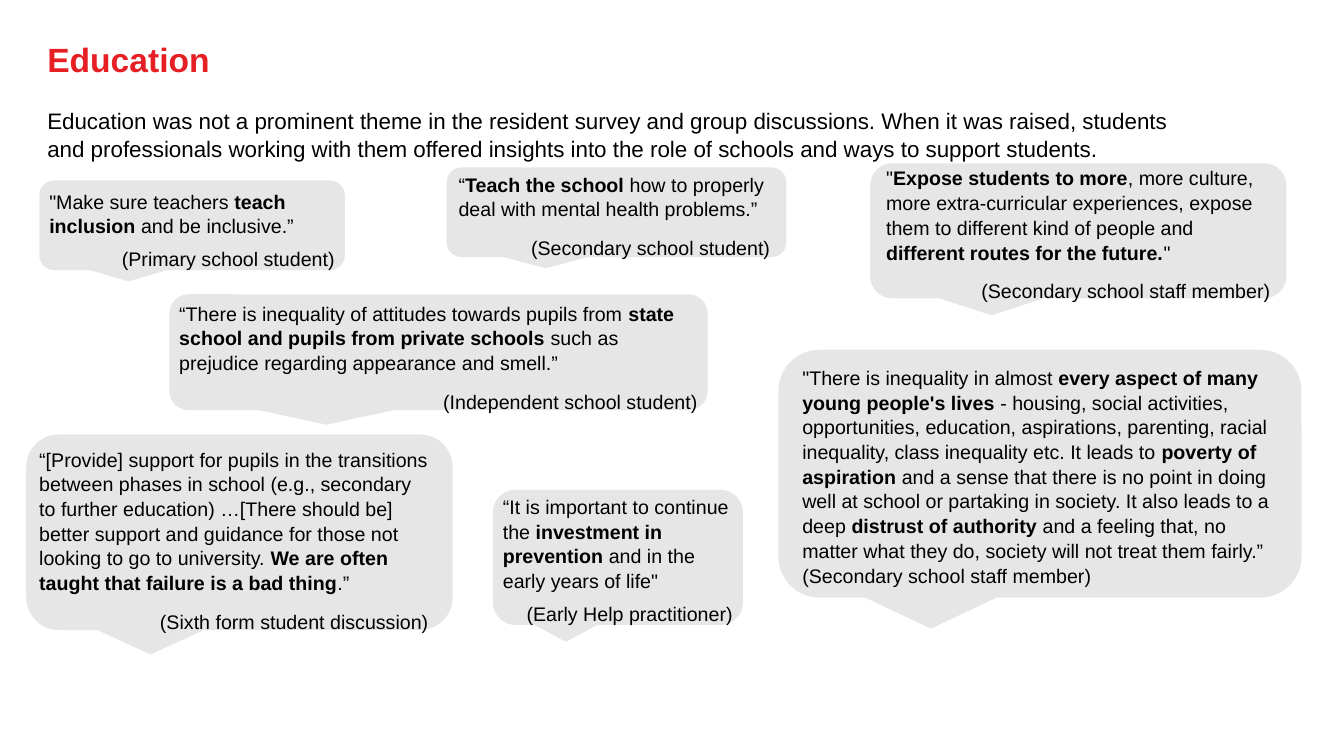
from dataclasses import dataclass

from pptx import Presentation
from pptx.dml.color import RGBColor
from pptx.enum.shapes import MSO_SHAPE
from pptx.enum.text import MSO_ANCHOR, PP_ALIGN
from pptx.slide import Slide
from pptx.text.text import TextFrame, _Paragraph
from pptx.util import Inches, Pt

BUBBLE = MSO_SHAPE.ROUNDED_RECTANGULAR_CALLOUT
MIDDLE = MSO_ANCHOR.MIDDLE
RIGHT = PP_ALIGN.RIGHT

WIDTH, HEIGHT = Inches(13.33), Inches(7.5)
FONT = "Arial"
COLORS = {"title": "E51F23", "text": "000000", "bubble": "E7E6E6"}


@dataclass
class Box:
    """Left, top, width and height in percent of the slide."""
    x: float
    y: float
    w: float
    h: float

    def place(self) -> tuple[int, int, int, int]:
        return (int(WIDTH * self.x / 100), int(HEIGHT * self.y / 100),
                int(WIDTH * self.w / 100), int(HEIGHT * self.h / 100))


@dataclass
class Quote:
    """Asterisks in the words enclose bold parts."""
    shape: Box
    area: Box
    words: str
    source: str = ""
    gap: int = 10


TITLE = Box(2.78, 4.67, 86.27, 6.93)
INTRO = Box(2.78, 13.33, 86.27, 8.93)

QUOTES = [
    Quote(Box(2.93, 23.87, 22.73, 11.87), Box(2.93, 24.27, 22.73, 8.93),
          '"Make sure teachers *teach inclusion *and be inclusive.” ',
          "(Primary school student)", 6),
    Quote(Box(33.23, 22.13, 25.28, 11.87), Box(33.38, 22, 24.68, 11.87),
          "“*Teach the school *how to properly deal with mental health problems.”",
          "(Secondary school student)"),
    Quote(Box(64.74, 21.6, 30.98, 17.87), Box(65.19, 21.2, 30.08, 16.8),
          '"*Expose students to more*, more culture, more extra-curricular experiences, '
          'expose them to different kind of people and '
          '*different routes for the future.*"',
          "(Secondary school staff member)"),
    Quote(Box(12.6, 38.93, 40.06, 15.33), Box(12.6, 39.07, 40.06, 12.93),
          "“There is inequality of attitudes towards pupils from "
          "*state school and pupils from private schools *"
          "such as prejudice regarding appearance and smell.”",
          "(Independent school student)"),
    Quote(Box(1.95, 57.47, 31.73, 25.87), Box(2.18, 58.4, 30.46, 22.53),
          "“[Provide] support for pupils in the transitions between phases in school "
          "(e.g., secondary to further education) …[There should be] better support "
          "and guidance for those not looking to go to university. "
          "*We are often taught that failure is a bad thing*.”",
          "(Sixth form student discussion)"),
    Quote(Box(36.68, 64.8, 18.6, 17.87), Box(36.68, 64.67, 18.6, 15.33),
          '“It is important to continue the *investment in prevention *'
          'and in the early years of life"',
          "(Early Help practitioner)", 6),
    Quote(Box(57.91, 46.27, 38.93, 32.8), Box(58.96, 47.6, 37.06, 28),
          '"There is inequality in almost *every aspect of many young people\'s lives*'
          ' - housing, social activities, opportunities, education, aspirations, '
          'parenting, racial inequality, class inequality etc. It leads to '
          '*poverty of aspiration *and a sense that there is no point in doing well '
          'at school or partaking in society. It also leads to a deep '
          '*distrust of authority *and a feeling that, no matter what they do, '
          'society will not treat them fairly.” (Secondary school staff member)'),
]


def paint(name: str) -> RGBColor:
    return RGBColor.from_string(COLORS[name])


def add_box(slide: Slide, box: Box) -> TextFrame:
    frame = slide.shapes.add_textbox(*box.place()).text_frame
    frame.word_wrap = True
    return frame


def write(para: _Paragraph, words: str, size: int, color: str = "text",
          pitch: float = 1.05) -> None:
    """Fill a paragraph, with every second part between asterisks bold."""
    para.line_spacing = pitch
    for i, part in enumerate(words.split("*")):
        run = para.add_run()
        run.text = part
        font = run.font
        font.name, font.size, font.bold = FONT, Pt(size), i % 2 == 1
        font.color.rgb = paint(color)


def add_quote(slide: Slide, quote: Quote) -> None:
    shape = slide.shapes.add_shape(BUBBLE, *quote.shape.place())
    shape.shadow.inherit = False
    shape.fill.solid()
    shape.fill.fore_color.rgb = paint("bubble")
    shape.line.fill.background()

    frame = add_box(slide, quote.area)
    write(frame.paragraphs[0], quote.words, 14)
    if quote.source:
        para = frame.add_paragraph()
        para.alignment = RIGHT
        para.space_before = Pt(quote.gap)
        write(para, quote.source, 14)


def main() -> None:
    deck = Presentation()
    deck.slide_width, deck.slide_height = WIDTH, HEIGHT
    slide = deck.slides.add_slide(deck.slide_layouts[6])

    # Heading
    frame = add_box(slide, TITLE)
    frame.vertical_anchor = MIDDLE
    write(frame.paragraphs[0], "Education", 24, "title", 0.9)
    frame.paragraphs[0].runs[0].font.bold = True

    # Introduction
    write(add_box(slide, INTRO).paragraphs[0],
          "Education was not a prominent theme in the resident survey and group "
          "discussions. When it was raised, students and professionals working with "
          "them offered insights into the role of schools and ways to support "
          "students.", 16)

    # Speech bubbles
    for quote in QUOTES:
        add_quote(slide, quote)

    deck.save("out.pptx")


if __name__ == "__main__":
    main()
